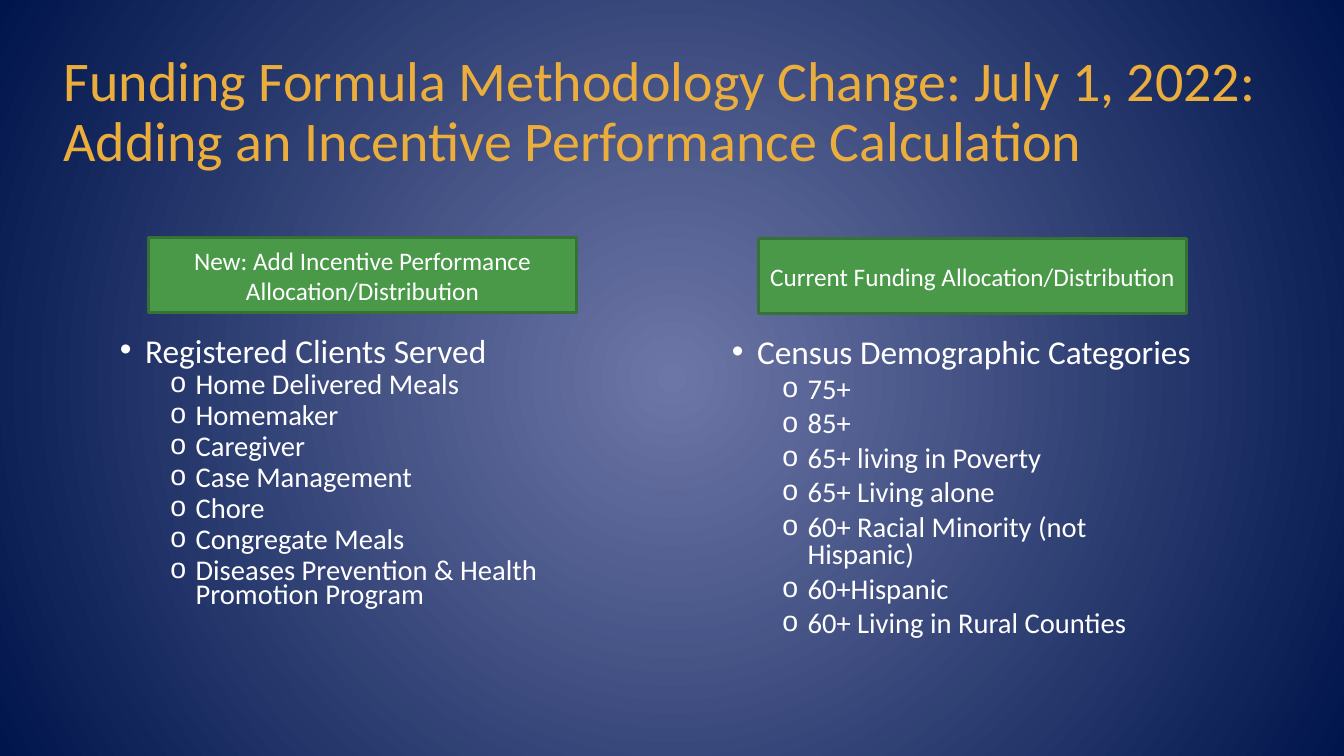
from lxml.etree import SubElement
from pptx import Presentation
from pptx.dml.color import RGBColor
from pptx.enum.shapes import MSO_SHAPE
from pptx.enum.text import MSO_ANCHOR, MSO_AUTO_SIZE, PP_ALIGN
from pptx.oxml.ns import qn
from pptx.util import Inches, Pt

FONT = "Calibri"
WHITE, GOLD = "FFFFFF", "EBAD3B"
GREEN, DARK_GREEN = "499949", "367136"
GLOW, NAVY = "6D77A7", "00154C"

SERVICES = [
    "Home Delivered Meals",
    "Homemaker",
    "Caregiver",
    "Case Management",
    "Chore",
    "Congregate Meals",
    "Diseases Prevention & Health Promotion Program",
]
DEMOGRAPHICS = [
    "75+",
    "85+",
    "65+ living in Poverty",
    "65+ Living alone",
    "60+ Racial Minority (not Hispanic)",
    "60+Hispanic",
    "60+ Living in Rural Counties",
]


def rgb(hex_code):
    """Turn a hex string into a colour."""
    return RGBColor.from_string(hex_code)


def write(p, text, size, color=WHITE, align=PP_ALIGN.LEFT, spacing=None, before=None):
    """Put formatted text into a paragraph."""
    p.alignment = align
    p.line_spacing = spacing
    if before is not None:
        p.space_before = Pt(before)
    r = p.add_run()
    r.text = text
    r.font.name = FONT
    r.font.size = Pt(size)
    r.font.color.rgb = rgb(color)


def place(sp, left, top, width, height, anchor):
    """Move a placeholder and return its prepared text frame."""
    sp.left, sp.top = Inches(left), Inches(top)
    sp.width, sp.height = Inches(width), Inches(height)
    tf = sp.text_frame
    tf.word_wrap = True
    tf.auto_size = MSO_AUTO_SIZE.NONE
    tf.vertical_anchor = anchor
    return tf


def set_bullet(p, char, indent):
    """Give a paragraph a hanging bullet."""
    pPr = p._p.get_or_add_pPr()
    pPr.set("marL", str(Inches(indent)))
    pPr.set("indent", str(Inches(-0.25)))
    SubElement(pPr, qn("a:buChar")).set("char", char)


def add_list(sp, box, heading, items, spacing):
    """Fill a body placeholder with a heading and its sub-items."""
    tf = place(sp, *box, MSO_ANCHOR.TOP)
    p = tf.paragraphs[0]
    write(p, heading, 23.8, spacing=spacing, before=10)
    set_bullet(p, "•", 0.25)
    for item in items:
        p = tf.add_paragraph()
        p.level = 1
        write(p, item, 20.4, spacing=spacing, before=5)
        set_bullet(p, "o", 0.75)


def add_label(slide, left, top, text):
    """Draw a green label above a list."""
    sp = slide.shapes.add_shape(
        MSO_SHAPE.RECTANGLE, Inches(left), Inches(top), Inches(4.25), Inches(0.74)
    )
    sp.shadow.inherit = False
    sp.fill.solid()
    sp.fill.fore_color.rgb = rgb(GREEN)
    sp.line.color.rgb = rgb(DARK_GREEN)
    sp.line.width = Pt(2)
    tf = sp.text_frame
    tf.word_wrap = True
    tf.vertical_anchor = MSO_ANCHOR.MIDDLE
    write(tf.paragraphs[0], text, 18, align=PP_ALIGN.CENTER)


def set_background(slide):
    """Fill the background with a circular gradient from the centre."""
    fill = slide.background.fill
    fill.gradient()
    for stop, position, color in zip(fill.gradient_stops, (0, 1), (GLOW, NAVY)):
        stop.position = position
        stop.color.rgb = rgb(color)
    grad = slide.element.find(".//" + qn("a:gradFill"))
    grad.remove(grad.find(qn("a:lin")))
    circle = SubElement(grad, qn("a:path"))
    circle.set("path", "circle")
    center = SubElement(circle, qn("a:fillToRect"))
    for side in "ltrb":
        center.set(side, "50000")


def main():
    """Build the slide and save it."""
    prs = Presentation()
    prs.slide_width, prs.slide_height = Inches(13.33), Inches(7.5)
    slide = prs.slides.add_slide(prs.slide_layouts[3])
    set_background(slide)
    title, services, demographics = slide.placeholders

    tf = place(title, 0.53, 0.4, 12.37, 1.45, MSO_ANCHOR.MIDDLE)
    write(
        tf.paragraphs[0],
        "Funding Formula Methodology Change: July 1, 2022: "
        "Adding an Incentive Performance Calculation",
        40, color=GOLD, spacing=0.9,
    )
    add_list(services, (1.09, 3.33, 5.08, 2.74),
             "Registered Clients Served", SERVICES, 0.7)
    add_list(demographics, (7.16, 3.31, 4.83, 2.83),
             "Census Demographic Categories", DEMOGRAPHICS, 0.8)
    add_label(slide, 7.52, 2.37, "Current Funding Allocation/Distribution")
    add_label(slide, 1.47, 2.36, "New: Add Incentive Performance Allocation/Distribution")
    prs.save("out.pptx")


if __name__ == "__main__":
    main()
